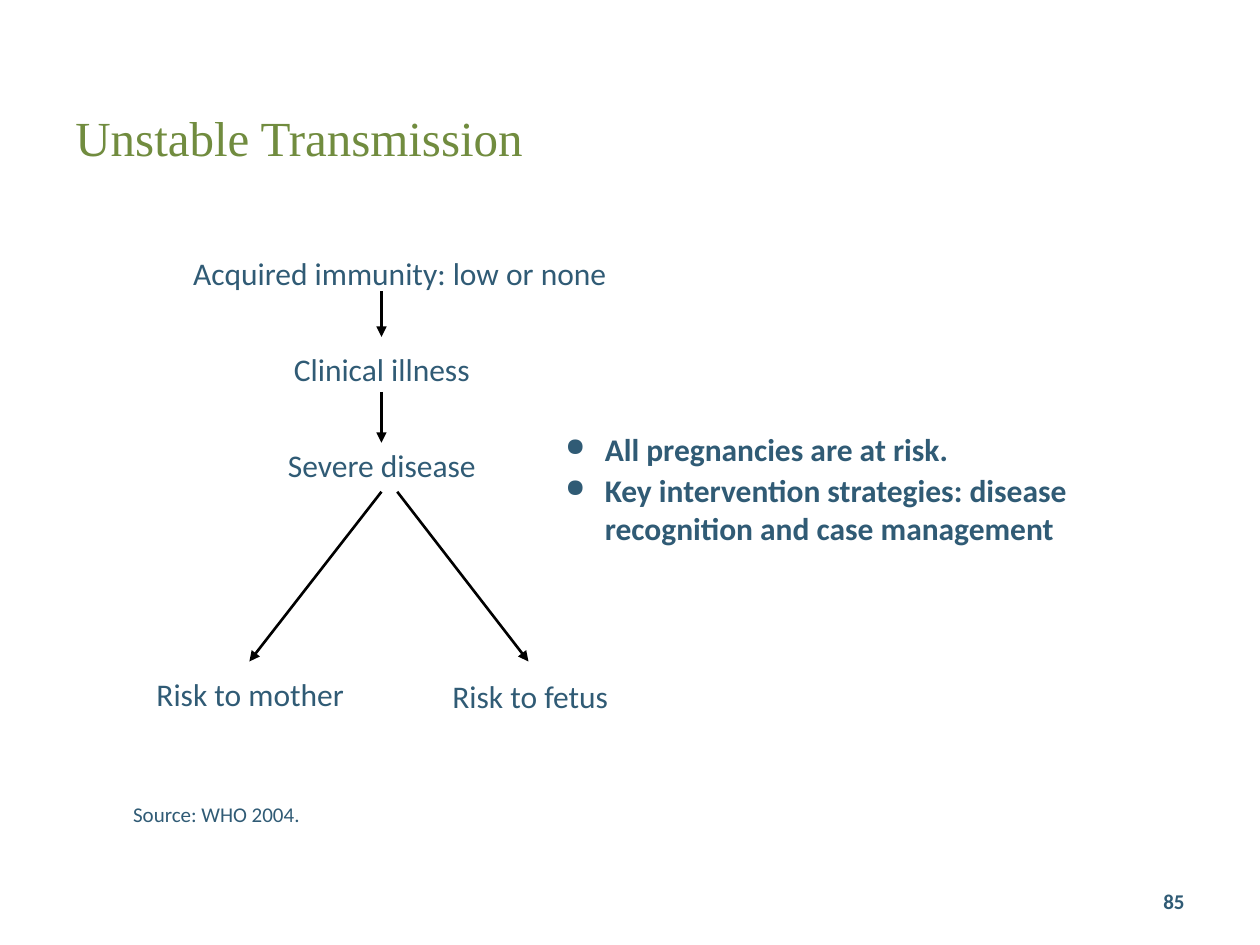
import pptx
import pptx.dml.color
import pptx.enum.shapes
import pptx.enum.text
import pptx.oxml.ns
import pptx.util
from lxml import etree

Pt = pptx.util.Pt
ALIGN = pptx.enum.text.PP_ALIGN
ANCHOR = pptx.enum.text.MSO_ANCHOR
qn = pptx.oxml.ns.qn

GREEN = pptx.dml.color.RGBColor(0x71, 0x8C, 0x3F)
BLUE = pptx.dml.color.RGBColor(0x30, 0x5B, 0x75)
BLACK = pptx.dml.color.RGBColor(0, 0, 0)

prs = pptx.Presentation()
prs.slide_width, prs.slide_height = Pt(720), Pt(540)
s = prs.slides.add_slide(prs.slide_layouts[6])


def add_text(text, box, size=18, font="Calibri", color=BLUE, bold=False,
             align=ALIGN.LEFT, anchor=ANCHOR.TOP, inset=3.6, bullet=False):
    """Add a text box at box (left, top, width, height); each line is a paragraph."""
    tf = s.shapes.add_textbox(*map(Pt, box)).text_frame
    tf.word_wrap = True
    tf.vertical_anchor = anchor
    tf.margin_left = tf.margin_right = Pt(inset)
    tf.margin_top = tf.margin_bottom = Pt(3.6)
    for i, line in enumerate(text.split("\n")):
        p = tf.paragraphs[0] if i == 0 else tf.add_paragraph()
        p.alignment = align
        if bullet:
            p.space_after = Pt(2)
            pPr = p._p.get_or_add_pPr()
            pPr.set("marL", str(Pt(22.5)))
            pPr.set("indent", str(Pt(-22.5)))
            etree.SubElement(pPr, qn("a:buSzPct")).set("val", "80000")
            etree.SubElement(pPr, qn("a:buChar")).set("char", "●")
        r = p.add_run()
        r.text = line
        r.font.size, r.font.name, r.font.bold = Pt(size), font, bold
        r.font.color.rgb = color


add_text("Unstable Transmission", (36, 36, 558, 62.5), size=28,
         font="Times New Roman", color=GREEN, anchor=ANCHOR.BOTTOM, inset=7.2)
add_text("Source: WHO 2004.", (69, 454.5, 207.5, 21.5), size=12, inset=7.2)

flow_steps = [
    ("Acquired immunity: low or none", (88.5, 142, 280, 28), ANCHOR.MIDDLE),
    ("Clinical illness", (102, 196.5, 232.5, 22.5), ANCHOR.TOP),
    ("Severe disease", (102, 251.5, 232.5, 22.5), ANCHOR.TOP),
    ("Risk to mother", (60.5, 381.5, 165, 29.5), ANCHOR.MIDDLE),
    ("Risk to fetus", (220.5, 383, 165, 29), ANCHOR.MIDDLE),
]
for label, box, anchor in flow_steps:
    add_text(label, box, align=ALIGN.CENTER, anchor=anchor)

add_text("All pregnancies are at risk.\n"
         "Key intervention strategies: disease recognition and case management",
         (319.5, 242, 310.5, 96.5), bold=True, bullet=True)

arrows = [
    (218, 166.5, 218, 192.5),
    (218, 224, 218, 253),
    (218, 281, 142.5, 378),
    (227, 281, 302, 378),
]
for ends in arrows:
    arrow = s.shapes.add_connector(pptx.enum.shapes.MSO_CONNECTOR.STRAIGHT,
                                   *map(Pt, ends))
    arrow.line.color.rgb = BLACK
    arrow.line.width = Pt(1.5)
    etree.SubElement(arrow.line._get_or_add_ln(), qn("a:tailEnd")).set("type", "triangle")
    etree.SubElement(arrow._element.spPr, qn("a:effectLst"))

add_text("85", (516, 500.5, 168, 29), size=12, bold=True, align=ALIGN.RIGHT,
         anchor=ANCHOR.MIDDLE, inset=7.2)

prs.save("out.pptx")
